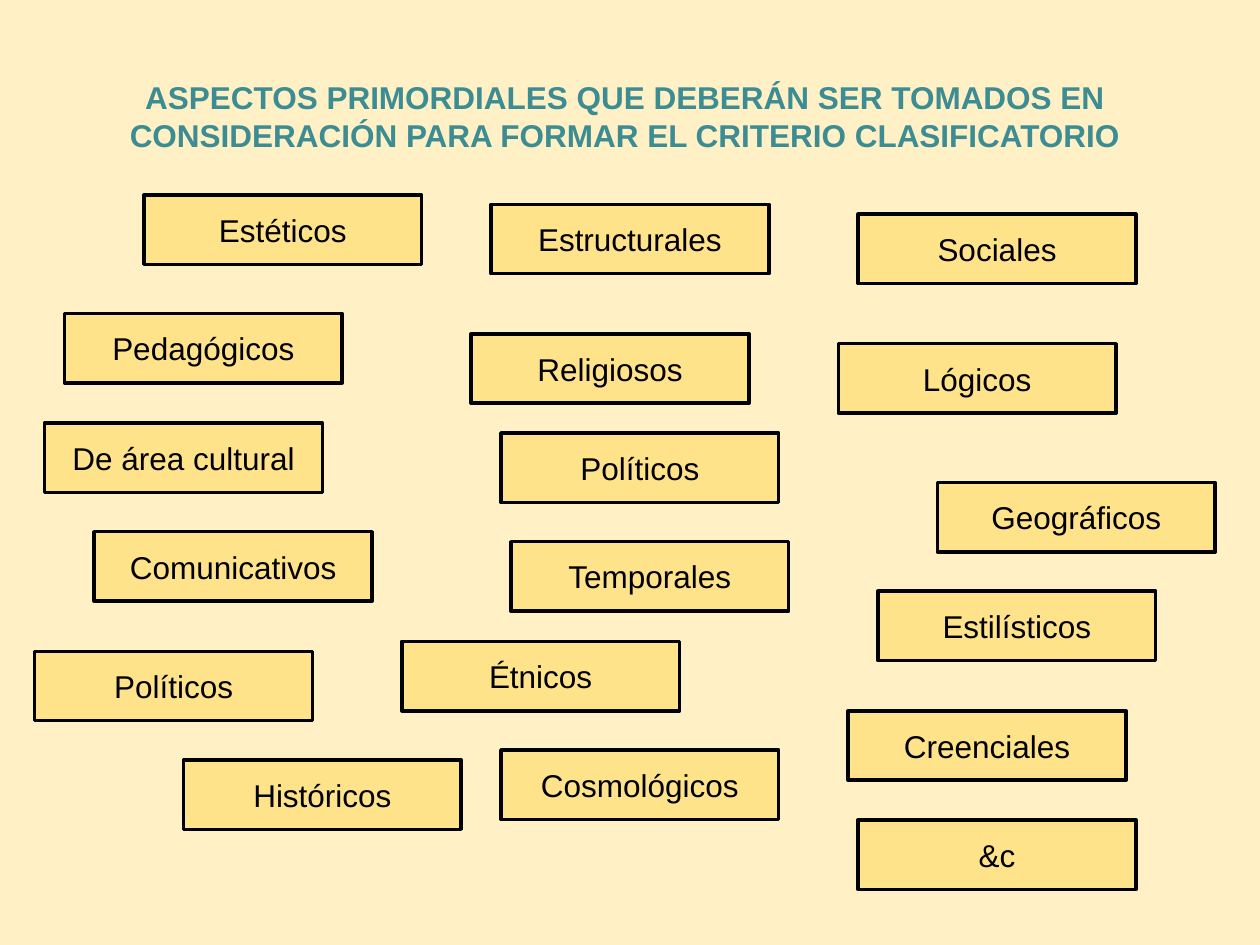
"""Build a slide of aspects to weigh when forming a classification criterion."""
from pptx import Presentation, util as u
from pptx.dml.color import RGBColor
from pptx.enum import shapes, text

TITLE = ("ASPECTOS PRIMORDIALES QUE DEBERÁN SER TOMADOS EN "
         "CONSIDERACIÓN PARA FORMAR EL CRITERIO CLASIFICATORIO")
TITLE_BOX = (0.7, 0.74, 23.8, 3.2)
ASPECT_SIZE = (5.6, 1.4)
ASPECTS = [
    ("Geográficos", 18.9, 9.73),
    ("Estéticos", 2.9, 3.93),
    ("Pedagógicos", 1.3, 6.32),
    ("Estructurales", 9.9, 4.12),
    ("De área cultural", 0.9, 8.53),
    ("Políticos", 10.1, 8.73),
    ("Comunicativos", 1.9, 10.72),
    ("Creenciales", 17.1, 14.33),
    ("Temporales", 10.3, 10.92),
    ("Religiosos", 9.5, 6.73),
    ("Étnicos", 8.1, 12.93),
    ("Políticos", 0.7, 13.13),
    ("Cosmológicos", 10.1, 15.12),
    ("Históricos", 3.7, 15.32),
    ("Estilísticos", 17.7, 11.92),
    ("Lógicos", 16.9, 6.93),
    ("&c", 17.3, 16.53),
    ("Sociales", 17.3, 4.32),
]
BACKGROUND, YELLOW, TEAL, BLACK = "FFF0C5", "FFE38B", "3C8C93", "000000"
FRAME = {"word_wrap": True, "auto_size": text.MSO_AUTO_SIZE.NONE,
         "vertical_anchor": text.MSO_ANCHOR.MIDDLE}
FONT = {"name": "Arial", "size": u.Pt(18)}


def paint(fill, colour):
    """Give a fill one solid colour."""
    fill.solid()
    fill.fore_color.rgb = RGBColor.from_string(colour)


def apply(target, values):
    """Set each named attribute on the target."""
    for name, value in values.items():
        setattr(target, name, value)


def write(shape, words, colour, bold):
    """Put centred text in a shape."""
    frame = shape.text_frame
    apply(frame, FRAME)
    paragraph = frame.paragraphs[0]
    paragraph.alignment = text.PP_ALIGN.CENTER
    run = paragraph.add_run()
    run.text = words
    apply(run.font, {**FONT, "bold": bold})
    paint(run.font.fill, colour)


def add_aspect(slide, words, left, top):
    """Add one outlined box naming an aspect."""
    box = map(u.Cm, (left, top, *ASPECT_SIZE))
    shape = slide.shapes.add_shape(shapes.MSO_SHAPE.RECTANGLE, *box)
    shape.shadow.inherit = False
    paint(shape.fill, YELLOW)
    paint(shape.line.fill, BLACK)
    shape.line.width = u.Pt(2)
    write(shape, words, BLACK, False)


def main():
    """Build and save the presentation."""
    presentation = Presentation()
    apply(presentation, {"slide_width": u.Cm(25.4), "slide_height": u.Cm(19.05)})
    slide = presentation.slides.add_slide(presentation.slide_layouts[5])
    paint(slide.background.fill, BACKGROUND)
    title = slide.shapes.title
    apply(title, dict(zip(("left", "top", "width", "height"), map(u.Cm, TITLE_BOX))))
    write(title, TITLE, TEAL, True)
    for aspect in ASPECTS:
        add_aspect(slide, *aspect)
    presentation.save("out.pptx")


if __name__ == "__main__":
    main()
